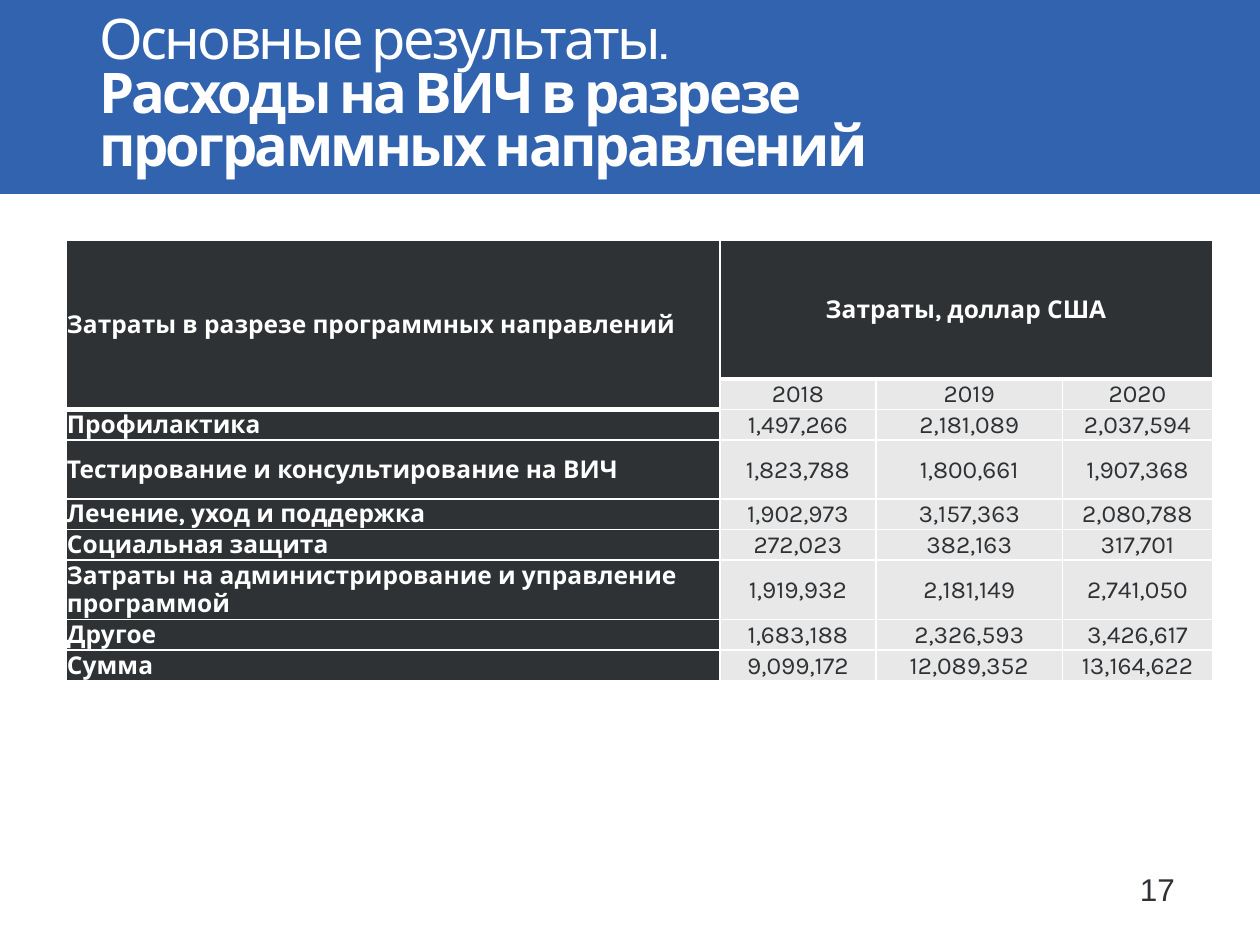
from lxml import etree
from pptx import Presentation, util as u
from pptx.dml.color import RGBColor
from pptx.enum import shapes, text
from pptx.oxml import ns

COLORS = {"blue": "3263AE", "dark": "2E3235", "light": "E8E8E8", "white": "FFFFFF"}


def add_run(paragraph, content, font="Karla", size=14, color="dark", bold=False, spacing=None):
    run = paragraph.add_run()
    run.text = content
    run.font.name = font
    run.font.size = u.Pt(size)
    run.font.bold = bold
    run.font.color.rgb = RGBColor.from_string(COLORS[color])
    if spacing is not None:
        run.font._element.set("spc", str(spacing))


def add_border(cell, side, width):
    line = etree.SubElement(cell._tc.get_or_add_tcPr(), ns.qn(f"a:ln{side}"), w=str(u.Pt(width)))
    fill = etree.SubElement(line, ns.qn("a:solidFill"))
    etree.SubElement(fill, ns.qn("a:srgbClr"), val=COLORS["white"])


presentation = Presentation()
presentation.slide_width = u.Cm(25.4)
presentation.slide_height = u.Cm(19.05)
slide = presentation.slides.add_slide(presentation.slide_layouts[6])

band = slide.shapes.add_shape(shapes.MSO_SHAPE.RECTANGLE, 0, 0, u.Cm(25.4), u.Cm(3.91))
band.shadow.inherit = False
band.fill.solid()
band.fill.fore_color.rgb = RGBColor.from_string(COLORS["blue"])
band.line.fill.background()

title = slide.shapes.add_textbox(u.Cm(1.75), 0, u.Cm(21.9), u.Cm(3.91))
title.text_frame.word_wrap = True
title.text_frame.vertical_anchor = text.MSO_ANCHOR.MIDDLE
paragraph = title.text_frame.paragraphs[0]
paragraph.line_spacing = 0.8
title_format = {"font": "Cabin", "size": 32, "color": "white", "spacing": -150}
add_run(paragraph, "Основные результаты.", **title_format)
paragraph.add_line_break()
add_run(paragraph, "Расходы на ВИЧ в разрезе программных направлений", bold=True, **title_format)

number = slide.shapes.add_textbox(u.Cm(22.73), u.Cm(17.42), u.Cm(2.67), u.Cm(1.02))
number.text_frame.word_wrap = True
add_run(number.text_frame.paragraphs[0], "17", font="Arial", size=18)

rows = [
    ("Затраты в разрезе программных направлений", "Затраты, доллар США", "", ""),
    ("", "2018", "2019", "2020"),
    ("Профилактика", "1,497,266", "2,181,089", "2,037,594"),
    ("Тестирование и консультирование на ВИЧ", "1,823,788", "1,800,661", "1,907,368"),
    ("Лечение, уход и поддержка", "1,902,973", "3,157,363", "2,080,788"),
    ("Социальная защита", "272,023", "382,163", "317,701"),
    ("Затраты на администрирование и управление программой", "1,919,932", "2,181,149", "2,741,050"),
    ("Другое", "1,683,188", "2,326,593", "3,426,617"),
    ("Сумма", "9,099,172", "12,089,352", "13,164,622"),
]
column_widths = [13.18, 3.15, 3.76, 3.02]
row_heights = [2.79, 0.56, 0.61, 1.19, 0.61, 0.61, 0.97, 0.61, 0.61]

frame = slide.shapes.add_table(len(rows), len(column_widths), u.Cm(1.33), u.Cm(4.85),
                               u.Cm(sum(column_widths)), u.Cm(sum(row_heights)))
table = frame.table
for column, width in zip(table.columns, column_widths):
    column.width = u.Cm(width)
for row, height in zip(table.rows, row_heights):
    row.height = u.Cm(height)
table.cell(0, 0).merge(table.cell(1, 0))
table.cell(0, 1).merge(table.cell(0, 3))

for row_index, values in enumerate(rows):
    for column_index, value in enumerate(values):
        cell = table.cell(row_index, column_index)
        is_label = column_index == 0
        is_dark = is_label or row_index == 0
        header_end = 1 if is_label else 0
        cell.margin_left = cell.margin_top = cell.margin_right = u.Cm(0.02)
        cell.margin_bottom = 0
        cell.vertical_anchor = text.MSO_ANCHOR.MIDDLE
        add_border(cell, "L", 1)
        add_border(cell, "R", 1)
        add_border(cell, "T", 3 if row_index == header_end + 1 else 1)
        add_border(cell, "B", 3 if row_index <= header_end else 1)
        cell.fill.solid()
        cell.fill.fore_color.rgb = RGBColor.from_string(COLORS["dark" if is_dark else "light"])
        paragraph = cell.text_frame.paragraphs[0]
        paragraph.alignment = text.PP_ALIGN.LEFT if is_label else text.PP_ALIGN.CENTER
        if value:
            add_run(paragraph, value, color="white" if is_dark else "dark", bold=is_dark)

presentation.save("out.pptx")
